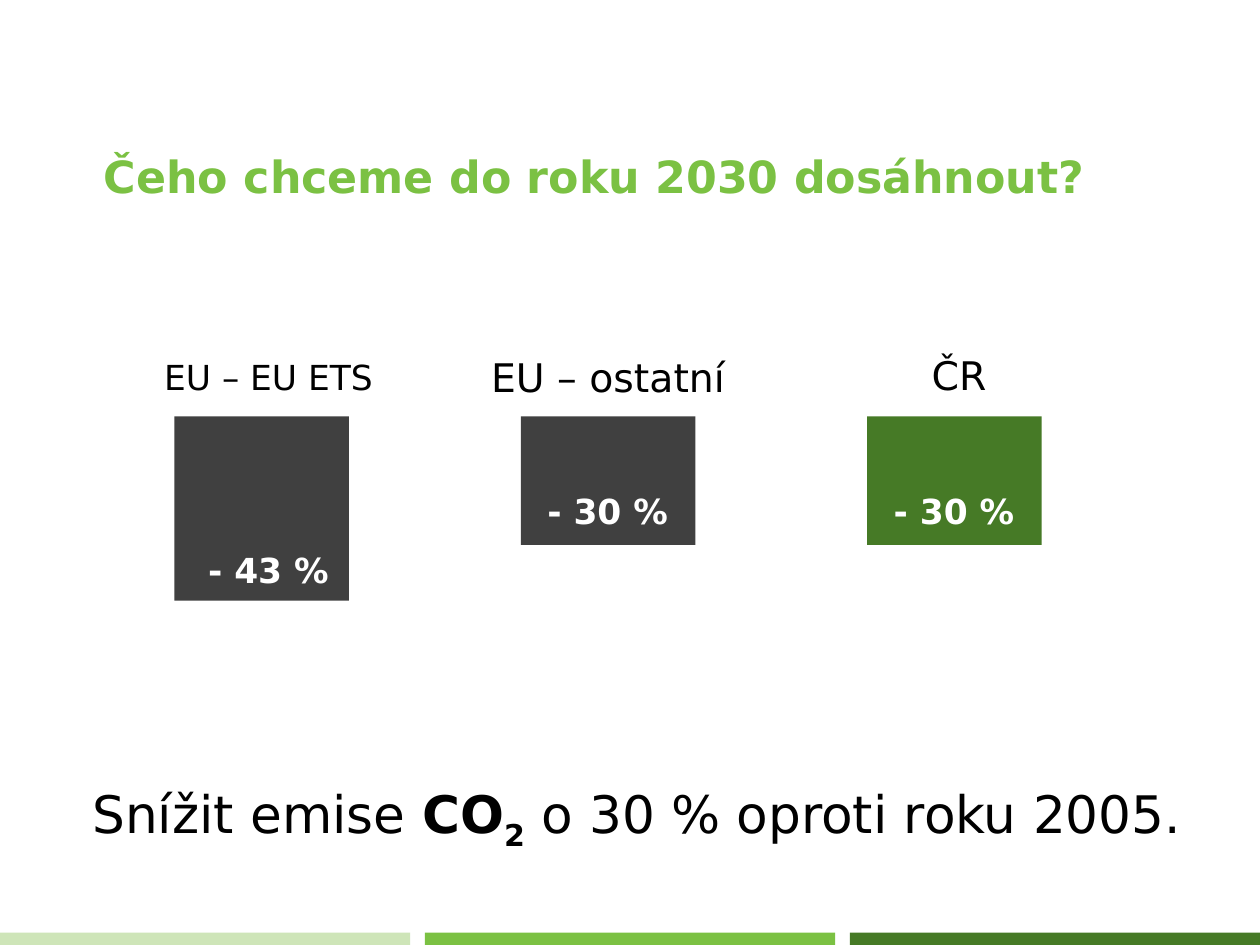
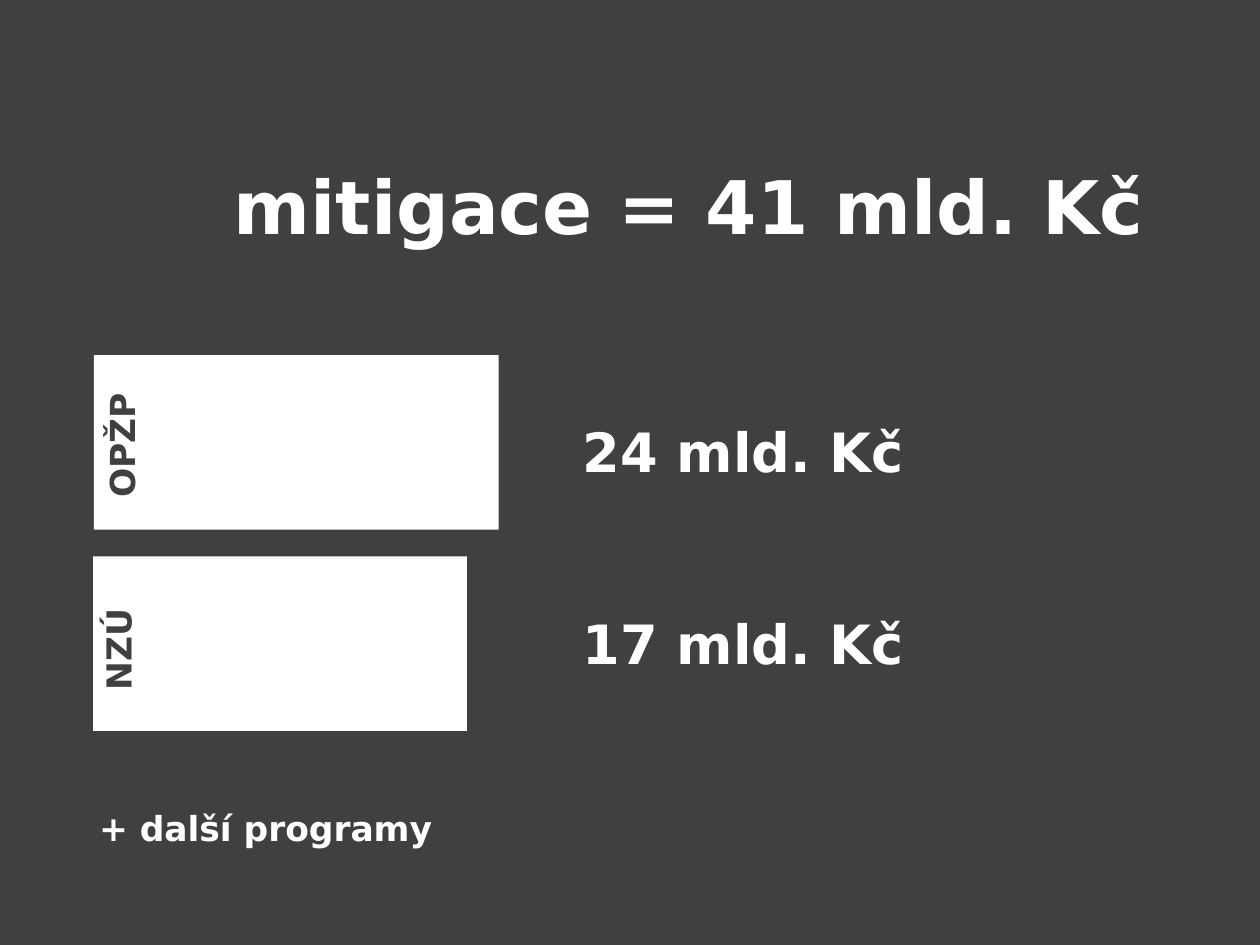
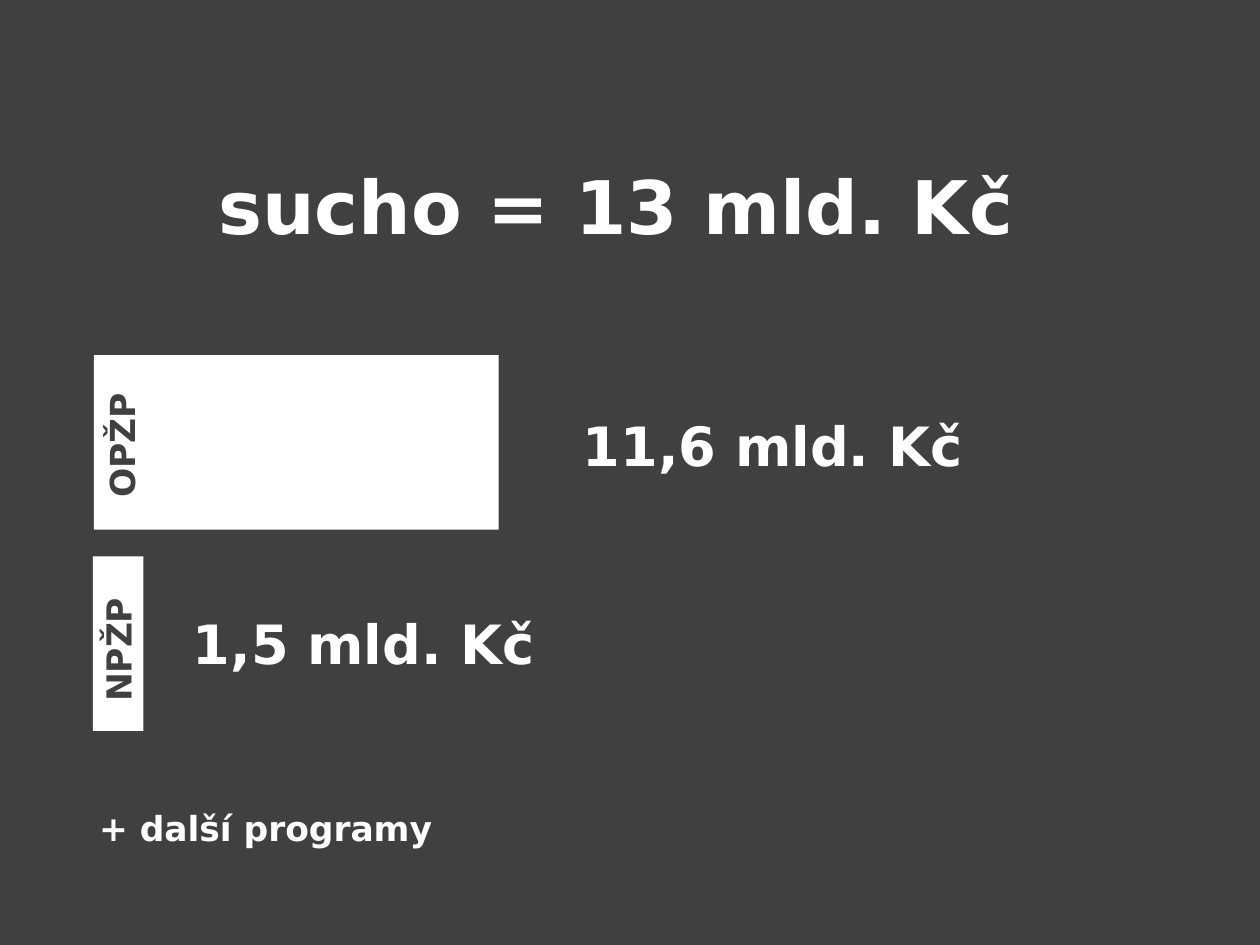
from dataclasses import dataclass

from pptx import Presentation
from pptx import util as u
from pptx.dml.color import RGBColor
from pptx.enum import shapes, text


@dataclass(frozen=True)
class Theme:
    font: str = "DejaVu Sans"
    # colours
    white: str = "FFFFFF"
    black: str = "000000"
    dark: str = "404040"
    pale_green: str = "CEE5B8"
    green: str = "7BC143"
    deep_green: str = "467A26"
    # type sizes
    small: int = 28
    label: int = 32
    title: int = 36
    sentence: int = 42
    amount: int = 44
    headline: int = 60


T = Theme()
W, H = 1024, 768
CENTER, LEFT = text.PP_ALIGN.CENTER, text.PP_ALIGN.LEFT


def new_slide(prs, background):
    s = prs.slides.add_slide(prs.slide_layouts[6])
    fill = s.background.fill
    fill.solid()
    fill.fore_color.rgb = RGBColor.from_string(background)
    return s


def add_rect(s, x, y, w, h, color):
    sp = s.shapes.add_shape(shapes.MSO_SHAPE.RECTANGLE,
                            u.Pt(x), u.Pt(y), u.Pt(w), u.Pt(h))
    sp.shadow.inherit = False
    sp.fill.solid()
    sp.fill.fore_color.rgb = RGBColor.from_string(color)
    sp.line.fill.background()
    return sp


def add_text(s, x, y, w, h, content, size, color, bold=False,
             align=CENTER, wrap=False):
    """Add a one-paragraph box; content is a string or (text, bold, baseline) runs."""
    sp = s.shapes.add_textbox(u.Pt(x), u.Pt(y), u.Pt(w), u.Pt(h))
    tf = sp.text_frame
    tf.word_wrap = wrap
    p = tf.paragraphs[0]
    p.alignment = align
    p.font.name = T.font
    p.font.size = u.Pt(size)
    p.font.color.rgb = RGBColor.from_string(color)
    if isinstance(content, str):
        p.font.bold = bold
        p.add_run().text = content
    else:
        for run_text, run_bold, baseline in content:
            r = p.add_run()
            r.text = run_text
            r.font.bold = run_bold
            if baseline:
                r._r.get_or_add_rPr().set("baseline", str(baseline))
    return sp


def add_footer(s):
    gap = 12
    w = (W - 2 * gap) / 3
    for i, color in enumerate((T.pale_green, T.green, T.deep_green)):
        add_rect(s, i * (w + gap), 758, w, 10, color)


def add_title(s, title):
    sp = add_text(s, 71.3, 111.6, 823.7, 56.9, title, T.title, T.green,
                  bold=True, wrap=True)
    tf = sp.text_frame
    tf.vertical_anchor = text.MSO_ANCHOR.BOTTOM
    tf.margin_left = tf.margin_right = u.Pt(4.3)
    tf.margin_top = tf.margin_bottom = u.Pt(4.3)


def targets_slide(prs):
    s = new_slide(prs, T.white)
    add_footer(s)
    add_title(s, "Čeho chceme do roku 2030 dosáhnout?")
    add_text(s, 49.7, 632.2, 936, 58.3,
             [("Snížit emise ", False, 0), ("CO", True, 0),
              ("2", True, -25000), (" o 30 % oproti roku 2005.", False, 0)],
             T.sentence, T.black, wrap=True)

    # Hanging bars: name, label box, label size, bar height, colour,
    # value, value offset from the bar's left edge and value top
    columns = [
        ("EU – EU ETS", (121, 285.8, 194.4, 41), T.small, 149.8, T.dark,
         "- 43 %", 14.4, 442.8),
        ("EU – ostatní", (388, 283.7, 212.4, 46), T.label, 104.4, T.dark,
         "- 30 %", 8.6, 394.6),
        ("ČR", (749.5, 282.2, 59.8, 46), T.label, 104.4, T.deep_green,
         "- 30 %", 8.6, 394.6),
    ]
    for i, (name, box, size, h, color, value, dx, y) in enumerate(columns):
        x = 141.8 + 281.5 * i
        add_rect(s, x, 338.4, 141.8, h, color)
        add_text(s, *box, name, size, T.black)
        add_text(s, x + dx, y, 123.8, 41, value, T.small, T.white, bold=True)


def funding_slide(prs, headline, headline_x, programmes):
    """Programmes: name, name width, bar width, amount, amount box (x, y, w)."""
    s = new_slide(prs, T.dark)
    add_text(s, headline_x, 126.7, 780, 80, headline, T.headline, T.white,
             bold=True, wrap=True)
    # Bars: left, top, centre of the upright name
    places = [(76.3, 288.7, 98.7, 361.8), (75.6, 452.2, 96, 528.1)]
    for place, programme in zip(places, programmes):
        x, y, cx, cy = place
        name, name_w, bar_w, amount, (ax, ay, aw) = programme
        add_rect(s, x, y, bar_w, 141.8, T.white)
        sp = add_text(s, cx - name_w / 2, cy - 20.5, name_w, 41, name,
                      T.small, T.dark, bold=True)
        sp.rotation = 270
        add_text(s, ax, ay, aw, 60.5, amount, T.amount, T.white, bold=True)
    add_text(s, 73.4, 652.3, 306, 41, "+ další programy", T.small, T.white,
             bold=True, align=LEFT, wrap=True)


def main():
    prs = Presentation()
    prs.slide_width, prs.slide_height = u.Pt(W), u.Pt(H)
    targets_slide(prs)
    funding_slide(prs, "mitigace = 41 mld. Kč", 170, [
        ("OPŽP", 99.4, 329, "24 mld. Kč", (465.8, 336.2, 277.2)),
        ("NZÚ", 81.4, 303.8, "17 mld. Kč", (465.8, 492.5, 277.2)),
    ])
    funding_slide(prs, "sucho = 13 mld. Kč", 110.6, [
        ("OPŽP", 99.4, 329, "11,6 mld. Kč", (465.8, 331.9, 324.7)),
        ("NPŽP", 99.4, 41, "1,5 mld. Kč", (149, 492.5, 293.8)),
    ])
    prs.save("out.pptx")


if __name__ == "__main__":
    main()
